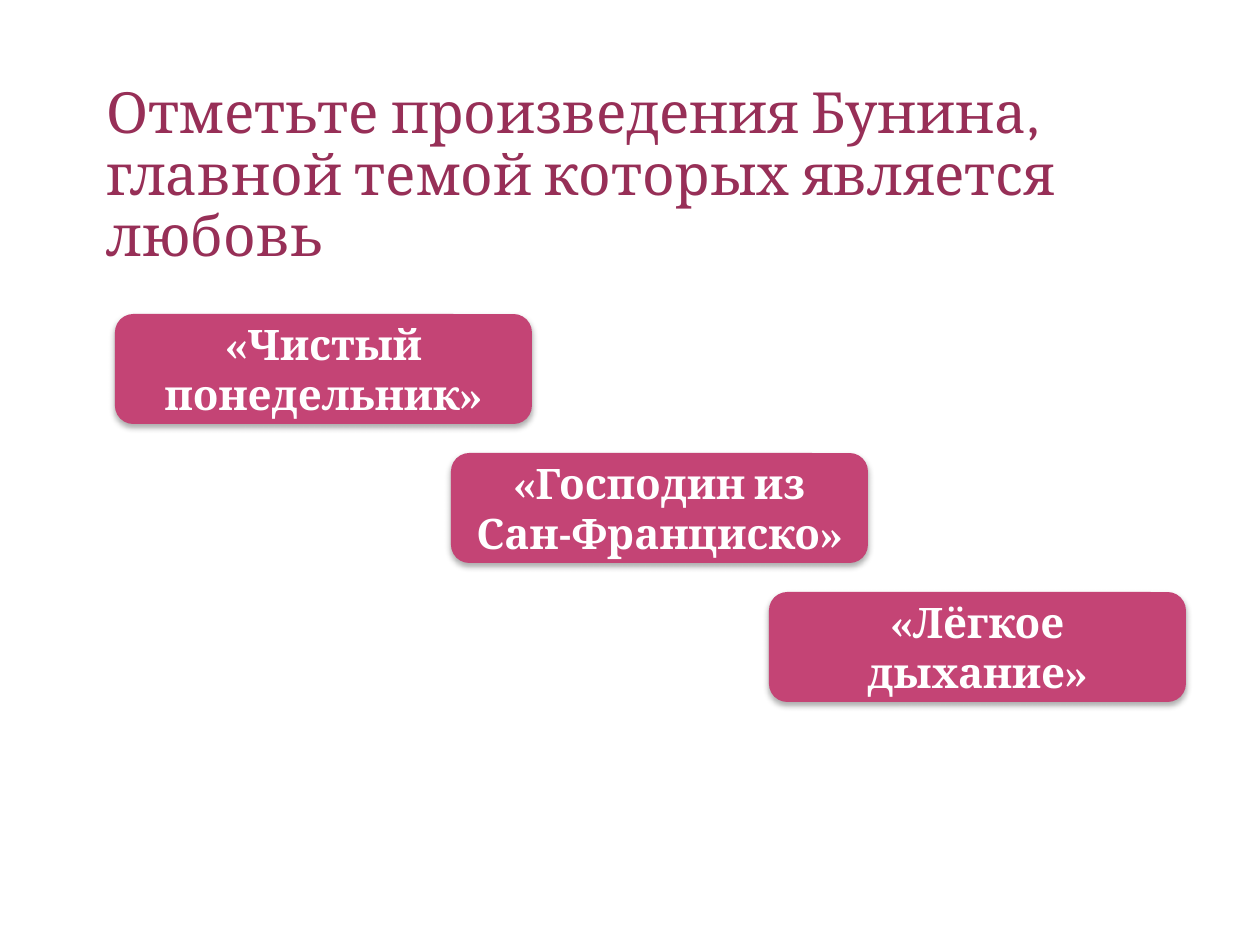
"""Build a quiz slide on Bunin's works about love."""
from dataclasses import dataclass

from lxml.etree import SubElement
from pptx import Presentation
from pptx.dml.color import RGBColor
from pptx.enum.shapes import MSO_SHAPE as Shape
from pptx.enum.text import MSO_ANCHOR as Anchor, MSO_AUTO_SIZE as AutoSize, PP_ALIGN as Align
from pptx.oxml.ns import qn
from pptx.util import Emu, Pt

QUESTION = "Отметьте произведения Бунина, главной темой которых является любовь"
ANSWERS = [
    ("«Чистый понедельник»", 115),
    ("«Господин из Сан-Франциско»", 451),
    ("«Лёгкое дыхание»", 769),
]

SLIDE_SIZE = (1260, 945)
QUESTION_BOX = (94, 86, 1040, 189)
ANSWER_SIZE = (417, 110)
ANSWER_TOP, ANSWER_STEP = 314, 139


@dataclass(frozen=True)
class Theme:
    font: str = "Cambria"
    question: str = "972F57"
    button: str = "C44475"
    answer: str = "FFFFFF"
    shadow: str = "000000"
    question_size: float = 32.4
    answer_size: int = 24


THEME = Theme()


def px(*lengths):
    return [Emu(round(length * 914400 / 126)) for length in lengths]


def write(holder, text, *, size, color, bold=False, align=Align.LEFT,
          anchor=Anchor.MIDDLE, spacing=None):
    frame = holder.text_frame
    frame.word_wrap = True
    frame.auto_size = AutoSize.NONE
    frame.vertical_anchor = anchor
    frame.text = text
    paragraph = frame.paragraphs[0]
    paragraph.alignment = align
    paragraph.line_spacing = spacing
    font = paragraph.runs[0].font
    font.name, font.size, font.bold = THEME.font, Pt(size), bold
    font.color.rgb = RGBColor.from_string(color)


def cast_shadow(button):
    button.shadow.inherit = False
    effects = button._element.spPr.find(qn("a:effectLst"))
    outer = SubElement(effects, qn("a:outerShdw"), blurRad=str(Pt(3.5)),
                       dist=str(Pt(2.2)), dir="5400000", rotWithShape="0")
    tint = SubElement(outer, qn("a:srgbClr"), val=THEME.shadow)
    SubElement(tint, qn("a:alpha"), val="32000")


def add_answer(slide, text, left, top):
    button = slide.shapes.add_shape(Shape.ROUNDED_RECTANGLE, *px(left, top, *ANSWER_SIZE))
    button.fill.solid()
    button.fill.fore_color.rgb = RGBColor.from_string(THEME.button)
    button.line.fill.background()
    cast_shadow(button)
    write(button, text, size=THEME.answer_size, color=THEME.answer,
          bold=True, align=Align.CENTER)


def main():
    deck = Presentation()
    deck.slide_width, deck.slide_height = px(*SLIDE_SIZE)
    slide = deck.slides.add_slide(deck.slide_layouts[5])

    question = slide.shapes.title
    question.left, question.top, question.width, question.height = px(*QUESTION_BOX)
    write(question, QUESTION, size=THEME.question_size, color=THEME.question,
          anchor=Anchor.BOTTOM, spacing=0.9)

    for row, (text, left) in enumerate(ANSWERS):
        add_answer(slide, text, left, ANSWER_TOP + row * ANSWER_STEP)

    deck.save("out.pptx")


if __name__ == "__main__":
    main()
